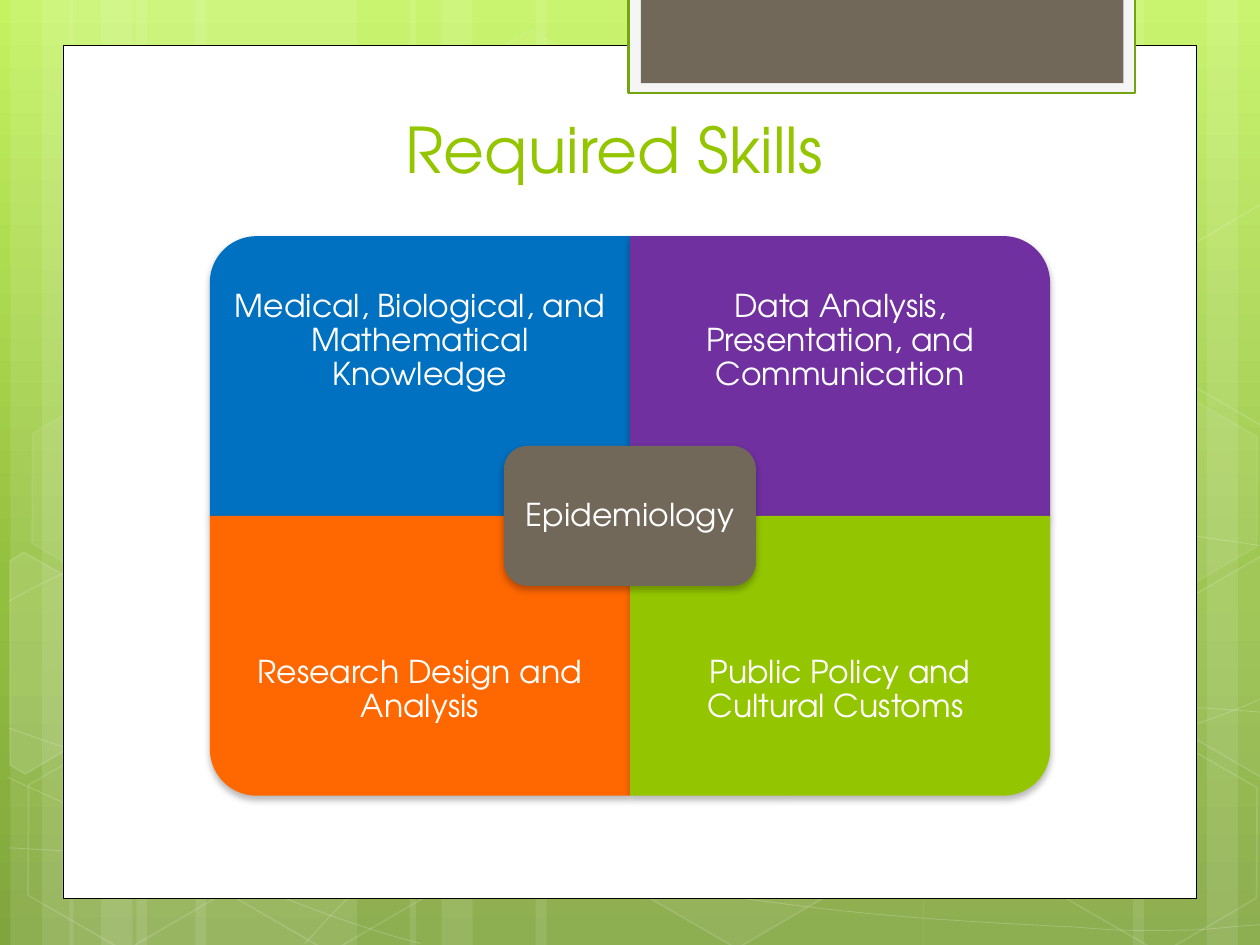
from copy import deepcopy
from math import cos, radians, sin
from lxml import etree
from pptx import Presentation
from pptx.dml.color import RGBColor
from pptx.enum.shapes import MSO_SHAPE
from pptx.enum.text import MSO_ANCHOR, PP_ALIGN
from pptx.oxml.ns import qn
from pptx.util import Cm, Pt

RECT, ROUND = MSO_SHAPE.RECTANGLE, MSO_SHAPE.ROUNDED_RECTANGLE
CORNER, HEXAGON = MSO_SHAPE.ROUND_1_RECTANGLE, MSO_SHAPE.HEXAGON
MIDDLE, CENTER = MSO_ANCHOR.MIDDLE, PP_ALIGN.CENTER

FONT = "TeX Gyre Adventor"
WHITE, LIME, STONE = "FFFFFF", "94C600", "71685A"
WIDE, HIGH, TILT = 25.4, 19.05, 30
MID_X, MID_Y = 12.7, 10.4
TILE_W, TILE_H, TEXT_H = 8.47, 5.64, 4.23

SKY = [(0, "C3F35F"), (0.62, "93BF3F"), (1, "81A53E")]
BANDS = [(2.54, 4.45), (0, 1.27), (0.64, 2.12)]
WIDE_BANDS = [(2.54, 7.82)] + BANDS[1:]
CURVES = [
    [(0.18, 17.09), (1.55, 17.17), (2.92, 17.25), (4.83, 17.22), (6.73, 17.2), (9.09, 17.15),
     (11.63, 16.89), (14.17, 16.64), (17.78, 16.15), (20.12, 15.67), (22.43, 15.19),
     (24.82, 14.43), (25.58, 14)],
    [(0.18, 12.12), (0.91, 11.71), (1.65, 11.33), (3.07, 10.95), (4.52, 10.57), (6.58, 10.01),
     (8.81, 9.83), (11.07, 9.65), (13.82, 9.63), (16.61, 9.83), (19.41, 10.03),
     (24.05, 10.82), (25.58, 11.02)],
    [(0.15, 15.67), (3.23, 17.07), (6.27, 18.47), (8.48, 19.02)],
    [(0.18, 14.68), (0.97, 14.96), (1.78, 15.24), (3.25, 15.65), (4.72, 16.03), (6.93, 16.66),
     (9.07, 17.09), (11.18, 17.53), (13.84, 17.98), (15.95, 18.24), (18.06, 18.52),
     (20.32, 18.62), (21.67, 18.69), (22.99, 18.8), (23.34, 18.75), (24, 18.75),
     (24.66, 18.72), (25.12, 18.64), (25.58, 18.64)],
    [(6.15, 19.02), (6.6, 18.52), (7.06, 18.01), (7.67, 17.55), (8.28, 17.09), (9.14, 16.59),
     (9.86, 16.23), (10.57, 15.88), (11, 15.72), (11.94, 15.47), (12.85, 15.21),
     (14.55, 14.86), (15.44, 14.68), (16.36, 14.5), (16.48, 14.5), (17.27, 14.45),
     (18.06, 14.38), (19.3, 14.3), (20.17, 14.27), (21.06, 14.25), (22.5, 14.27),
     (22.5, 14.27), (22.5, 14.27), (24.21, 14.27), (24.21, 14.27), (24.66, 14.3),
     (25.1, 14.33), (25.32, 14.35), (25.55, 14.38), (25.48, 14.35), (25.55, 14.38)],
]
CELLS = [(8.48, 0.91, 4, 8), (12.62, 14.96, 6, 12), (0.28, 15.01, 0, 12), (0.36, 7.92, 7, 8),
         (4.42, 15.04, 0, 12), (19.13, 11.51, 10, 12), (21.18, 15.06, 0, 12),
         (21.18, 7.98, 7, 8)]
LEFT = [(0.2, 11.3), (0.48, 11.13), (2.44, 12.24), (2.41, 14.48), (0.51, 15.6), (0.2, 15.42)]
RIGHT = [(23.52, 12.32), (25.43, 11.2), (25.63, 11.33), (25.63, 15.57), (25.45, 15.67),
         (23.52, 14.55)]
UPPER = [(x, y - 7.09) for x, y in RIGHT]
CUTS = [(LEFT, 0.91, 13.59, 10), (RIGHT, 25.02, 13.21, 4), (UPPER, 25.02, 6.12, 0)]
TILES = [
    (0, 0, 270, "0070C0", "Medical, Biological, and Mathematical Knowledge"),
    (1, 0, 0, "7030A0", "Data Analysis, Presentation, and Communication"),
    (0, 1, 180, "FF6700", "Research Design and Analysis"),
    (1, 1, 90, LIME, "Public Policy and Cultural Customs "),
]


def hue(code):
    """Turn a hex string into a colour."""
    return RGBColor.from_string(code)


def style(shape, fill=None, line=None, width=1, clear=100, faint=100):
    """Set fill and outline, with their opacity in percent."""
    shape.shadow.inherit = False
    shape.fill.background()
    shape.line.fill.background()
    if fill:
        shape.fill.solid()
        shape.fill.fore_color.rgb = hue(fill)
    if line:
        shape.line.color.rgb = hue(line)
        shape.line.width = Pt(width)
    for query, part in (("p:spPr/a:solidFill/a:srgbClr", clear),
                        ("p:spPr/a:ln/a:solidFill/a:srgbClr", faint)):
        for node in shape.element.xpath(query) if part < 100 else []:
            etree.SubElement(node, qn("a:alpha"), val=str(part * 1000))


def block(slide, kind, x, y, w, h, **look):
    """Add a styled preset shape."""
    shape = slide.shapes.add_shape(kind, Cm(x), Cm(y), Cm(w), Cm(h))
    style(shape, **look)
    return shape


def trace(slide, points, close, **look):
    """Add a styled outline through the points."""
    first, *rest = [(Cm(x), Cm(y)) for x, y in points]
    pen = slide.shapes.build_freeform(*first)
    pen.add_line_segments(rest, close=close)
    shape = pen.convert_to_shape()
    style(shape, **look)
    return shape


def bend(shape):
    """Turn each three line segments into one Bezier curve."""
    lines = shape.element.xpath(".//a:lnTo")
    for i in range(0, len(lines), 3):
        curve = etree.Element(qn("a:cubicBezTo"))
        lines[i].addprevious(curve)
        for line in lines[i:i + 3]:
            curve.append(line[0])
            line.getparent().remove(line)


def level(points, mid_x, mid_y):
    """Turn the points back by the tilt around a centre."""
    c, s = cos(radians(TILT)), sin(radians(TILT))
    return [(mid_x + (x - mid_x) * c + (y - mid_y) * s,
             mid_y - (x - mid_x) * s + (y - mid_y) * c) for x, y in points]


def write(shape, text, size=18, color=WHITE, inset=0.35, space=0.9):
    """Put centred text in a shape."""
    frame = shape.text_frame
    frame.word_wrap = True
    frame.vertical_anchor = MIDDLE
    frame.margin_left = frame.margin_right = Cm(inset)
    frame.margin_top = frame.margin_bottom = Cm(inset)
    para = frame.paragraphs[0]
    para.alignment, para.line_spacing = CENTER, space
    run = para.add_run()
    run.text = text
    run.font.name, run.font.size = FONT, Pt(size)
    run.font.color.rgb = hue(color)


def label(slide, text, x, y, w, h, **form):
    """Add a text box."""
    write(slide.shapes.add_textbox(Cm(x), Cm(y), Cm(w), Cm(h)), text, **form)


def shade(shape):
    """Give a shape a soft shadow below it."""
    effects = shape.element.spPr.find(qn("a:effectLst"))
    outer = etree.SubElement(effects, qn("a:outerShdw"), blurRad=str(Pt(4)),
                             dist=str(Pt(2)), dir="5400000", rotWithShape="0")
    black = etree.SubElement(outer, qn("a:srgbClr"), val="000000")
    etree.SubElement(black, qn("a:alpha"), val="28000")


def sky(slide):
    """Fill the background with a vertical gradient."""
    fill = slide.background.fill
    fill.gradient()
    fill.gradient_angle = 270
    stops = slide.element.find(".//" + qn("a:gsLst"))
    stops.append(deepcopy(stops[0]))
    for stop, (place, color) in zip(fill.gradient_stops, SKY):
        stop.position, stop.color.rgb = place, hue(color)


def decor(slide):
    """Draw the faint bands, curves and hexagons."""
    bars = [(base + gap, w) for base, bands in
            ((0.21, BANDS), (1.4, BANDS), (8.26, WIDE_BANDS)) for gap, w in bands]
    bars += [(25.6 - gap - w, w) for gap, w in BANDS]
    for x, w in bars:
        block(slide, RECT, x, 0, w, HIGH, fill=WHITE, clear=10)
    for knots in CURVES:
        bend(trace(slide, knots, False, line=WHITE, width=0.5, faint=20))
    for x, y, part, edge in CELLS:
        cell = block(slide, HEXAGON, x, y, 4.45, 3.86, fill=WHITE if part else None,
                     clear=part, line=WHITE, faint=edge)
        cell.adjustments[0], cell.rotation = 0.285, TILT
    for points, x, y, part in CUTS:
        cut = trace(slide, level(points, x, y), True, fill=WHITE if part else None,
                    clear=part, line=WHITE, faint=12)
        cut.rotation = TILT


def tile(slide, col, row, turn, color, text):
    """Draw one quadrant, rounded at its outer corner, with its text."""
    x, y = MID_X + (col - 1) * TILE_W, MID_Y + (row - 1) * TILE_H
    w, h = (TILE_H, TILE_W) if turn % 180 else (TILE_W, TILE_H)
    shape = block(slide, CORNER, x + (TILE_W - w) / 2, y + (TILE_H - h) / 2, w, h, fill=color)
    shape.rotation = turn
    shade(shape)
    label(slide, text, x, y + row * (TILE_H - TEXT_H), TILE_W, TEXT_H)


def main():
    """Build and save the slide."""
    deck = Presentation()
    deck.slide_width, deck.slide_height = Cm(WIDE), Cm(HIGH)
    slide = deck.slides.add_slide(deck.slide_layouts[5])
    sky(slide)
    decor(slide)
    block(slide, RECT, 1.27, 0.91, 22.86, 17.2, fill=WHITE, line="000000", width=0.5)
    block(slide, RECT, 12.67, -0.05, 10.21, 1.93, fill="F5F5F5", line="74A510", width=1.25)
    block(slide, RECT, 12.92, -0.05, 9.73, 1.73, fill=STONE)
    for item in TILES:
        tile(slide, *item)
    shade(block(slide, ROUND, MID_X - 2.54, MID_Y - 1.41, 5.08, 2.82, fill=STONE))
    label(slide, "Epidemiology", MID_X - 2.4, MID_Y - 1.27, 4.8, 2.54, inset=0.18)
    title = slide.shapes.title
    title.left, title.top, title.width, title.height = Cm(3.35), Cm(2.08), Cm(18.06), Cm(1.8)
    write(title, "Required Skills", size=36, color=LIME, inset=0.13, space=1)
    slide.shapes.element.append(title.element)
    deck.save("out.pptx")


if __name__ == "__main__":
    main()
